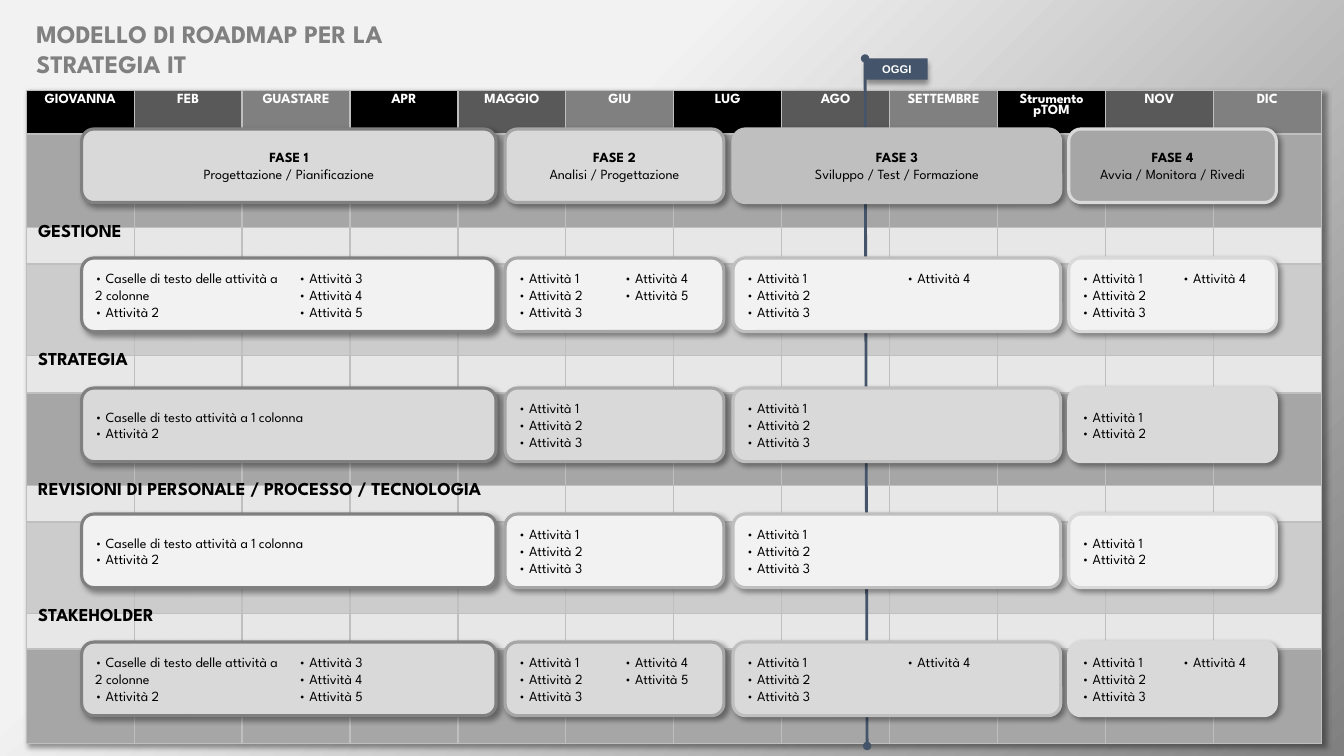
from lxml import etree
from pptx import Presentation
from pptx.dml.color import RGBColor
from pptx.enum.shapes import MSO_CONNECTOR, MSO_SHAPE
from pptx.enum.text import MSO_ANCHOR, PP_ALIGN
from pptx.oxml import parse_xml
from pptx.oxml.ns import nsdecls, qn
from pptx.util import Inches, Pt

BLACK = RGBColor(0x00, 0x00, 0x00)
WHITE = RGBColor(0xFF, 0xFF, 0xFF)
CHARCOAL = RGBColor(0x59, 0x59, 0x59)
GRAY = RGBColor(0x80, 0x80, 0x80)
MID_GRAY = RGBColor(0xA6, 0xA6, 0xA6)
SILVER = RGBColor(0xBF, 0xBF, 0xBF)
LANE_GRAY = RGBColor(0xCC, 0xCC, 0xCC)
LIGHT_GRAY = RGBColor(0xD9, 0xD9, 0xD9)
HEADING_GRAY = RGBColor(0xE7, 0xE7, 0xE7)
PALE = RGBColor(0xF2, 0xF2, 0xF2)
SLATE = RGBColor(0x44, 0x54, 0x6A)
FONT = "League Spartan"


def add_run(paragraph, text, size, color, bold=False, name=FONT):
    run = paragraph.add_run()
    run.text = text
    run.font.size = Pt(size)
    run.font.name = name
    run.font.bold = bold
    run.font.color.rgb = color
    return run


def add_shadow(properties, angle):
    effects = properties.find(qn("a:effectLst"))
    if effects is None:
        effects = etree.SubElement(properties, qn("a:effectLst"))
    effects.append(parse_xml(
        f'<a:outerShdw {nsdecls("a")} blurRad="{Pt(4)}" dist="{Pt(3)}" dir="{angle * 60000}" '
        'algn="tl" rotWithShape="0"><a:srgbClr val="000000"><a:alpha val="40000"/>'
        '</a:srgbClr></a:outerShdw>'))


presentation = Presentation()
presentation.slide_width = Inches(13.33)
presentation.slide_height = Inches(7.5)
slide = presentation.slides.add_slide(presentation.slide_layouts[5])

background = slide.background.fill
background.gradient()
background.gradient_angle = 315
for stop, position, color in zip(background.gradient_stops, (0.34, 1), (PALE, GRAY)):
    stop.position = position
    stop.color.rgb = color

title = slide.shapes.title
title.left, title.top, title.width, title.height = map(Inches, (0.26, 0.13, 4.19, 0.7))
title.text_frame.word_wrap = True
title.text_frame.vertical_anchor = MSO_ANCHOR.TOP
title_paragraph = title.text_frame.paragraphs[0]
title_paragraph.alignment = PP_ALIGN.LEFT
add_run(title_paragraph, "MODELLO DI ROADMAP PER LA STRATEGIA IT", 18, GRAY, True)

months = ["GIOVANNA", "FEB", "GUASTARE", "APR", "MAGGIO", "GIU", "LUG", "AGO",
          "SETTEMBRE", "Strumento pTOM", "NOV", "DIC"]
month_fills = [BLACK, CHARCOAL, GRAY]
row_heights = [0.43, 0.93, 0.36, 0.91, 0.37, 0.92, 0.36, 0.91, 0.35, 0.94]
row_fills = [None, MID_GRAY] + [HEADING_GRAY, LANE_GRAY, HEADING_GRAY, MID_GRAY] * 2

table_frame = slide.shapes.add_table(len(row_heights), len(months), Inches(0.26), Inches(0.9),
                                     Inches(12.85), Inches(6.48))
table = table_frame.table
table.first_row = False
table.horz_banding = False
table_properties = table_frame.element.find(".//" + qn("a:tblPr"))
add_shadow(table_properties, 45)
table_properties.insert(0, table_properties.find(qn("a:effectLst")))
for column in table.columns:
    column.width = Inches(12.85 / len(months))
for row, height, row_fill in zip(table.rows, row_heights, row_fills):
    row.height = Inches(height)
    for index, cell in enumerate(row.cells):
        paragraph = cell.text_frame.paragraphs[0]
        if row_fill is None:
            paragraph.alignment = PP_ALIGN.CENTER
            paragraph.line_spacing = 0.8
            add_run(paragraph, months[index], 10, WHITE, True)
        else:
            paragraph.font.size = Pt(10)
        cell_properties = cell._tc.get_or_add_tcPr()
        for side in ("lnL", "lnR", "lnT", "lnB"):
            cell_properties.append(parse_xml(
                f'<a:{side} {nsdecls("a")} w="{Pt(1)}"><a:solidFill>'
                f'<a:srgbClr val="{SILVER}"/></a:solidFill></a:{side}>'))
        cell.fill.solid()
        cell.fill.fore_color.rgb = row_fill or month_fills[index % 3]

flag = slide.shapes.add_shape(MSO_SHAPE.SNIP_1_RECTANGLE, Inches(8.59), Inches(0.58),
                              Inches(0.61), Inches(0.21))
flag.adjustments[0] = 0
flag.fill.solid()
flag.fill.fore_color.rgb = SLATE
flag.line.fill.background()
flag.shadow.inherit = False
add_shadow(flag.element.spPr, 90)
flag.text_frame.vertical_anchor = MSO_ANCHOR.MIDDLE
flag_paragraph = flag.text_frame.paragraphs[0]
flag_paragraph.alignment = PP_ALIGN.CENTER
add_run(flag_paragraph, "OGGI", 8, WHITE, True, "Arial")

today_line = slide.shapes.add_connector(MSO_CONNECTOR.STRAIGHT, Inches(8.58), Inches(0.58),
                                        Inches(8.6), Inches(7.4))
today_line.line.color.rgb = SLATE
today_line.line.width = Pt(2)
for end in ("headEnd", "tailEnd"):
    etree.SubElement(today_line.line._get_or_add_ln(), qn(f"a:{end}"), type="oval")
etree.SubElement(today_line.element.spPr, qn("a:effectLst"))

phases = [
    (0.81, 4.11, GRAY, LIGHT_GRAY, "Progettazione / Pianificazione"),
    (5.01, 2.17, MID_GRAY, LIGHT_GRAY, "Analisi / Progettazione"),
    (7.27, 3.25, SILVER, SILVER, "Sviluppo / Test / Formazione"),
    (10.6, 2.06, LIGHT_GRAY, MID_GRAY, "Avvia / Monitora / Rivedi"),
]
two_column = ("Caselle di testo delle attività a 2 colonne", (5, 5, 4, 4), 2)
one_column = ("Caselle di testo attività a 1 colonna", (2, 3, 3, 2), 1)
lanes = [
    ("GESTIONE", 2.13, 2.56, PALE, two_column),
    ("STRATEGIA", 3.4, 3.85, LIGHT_GRAY, one_column),
    ("REVISIONI DI PERSONALE / PROCESSO / TECNOLOGIA", 4.69, 5.1, PALE, one_column),
    ("STAKEHOLDER", 5.94, 6.37, LIGHT_GRAY, two_column),
]

boxes = []
for number, (left, width, outline, fill, subtitle) in enumerate(phases, 1):
    heading = [(f"FASE {number}", True), (subtitle, False)]
    boxes.append((left, 1.28, width, outline, fill, heading, PP_ALIGN.CENTER, 1))
for label, label_top, top, fill, (first_text, counts, columns) in lanes:
    for index, (left, width, outline, phase_fill, subtitle) in enumerate(phases):
        tasks = [(f"• Attività {number}", False) for number in range(1, counts[index] + 1)]
        if index == 0:
            tasks[0] = (f"• {first_text}", False)
        boxes.append((left, top, width, outline, fill, tasks, PP_ALIGN.LEFT, columns))

for left, top, width, outline, fill, lines, alignment, columns in boxes:
    box = slide.shapes.add_shape(MSO_SHAPE.ROUNDED_RECTANGLE, Inches(left), Inches(top),
                                 Inches(width), Inches(0.73))
    box.fill.solid()
    box.fill.fore_color.rgb = fill
    box.line.color.rgb = outline
    box.line.width = Pt(2.25)
    box.shadow.inherit = False
    add_shadow(box.element.spPr, 45)
    frame = box.text_frame
    frame.word_wrap = True
    frame.vertical_anchor = MSO_ANCHOR.MIDDLE
    if columns > 1:
        body = box.element.txBody.bodyPr
        body.set("numCol", str(columns))
        body.set("spcCol", str(Inches(0.2)))
    for index, (text, bold) in enumerate(lines):
        paragraph = frame.add_paragraph() if index else frame.paragraphs[0]
        paragraph.alignment = alignment
        add_run(paragraph, text, 10, BLACK, bold)

for label, label_top, *lane in lanes:
    label_box = slide.shapes.add_textbox(Inches(0.28), Inches(label_top), Inches(12.83), Inches(0.32))
    label_box.text_frame.word_wrap = True
    add_run(label_box.text_frame.paragraphs[0], label, 13, BLACK, True)

presentation.save("out.pptx")
